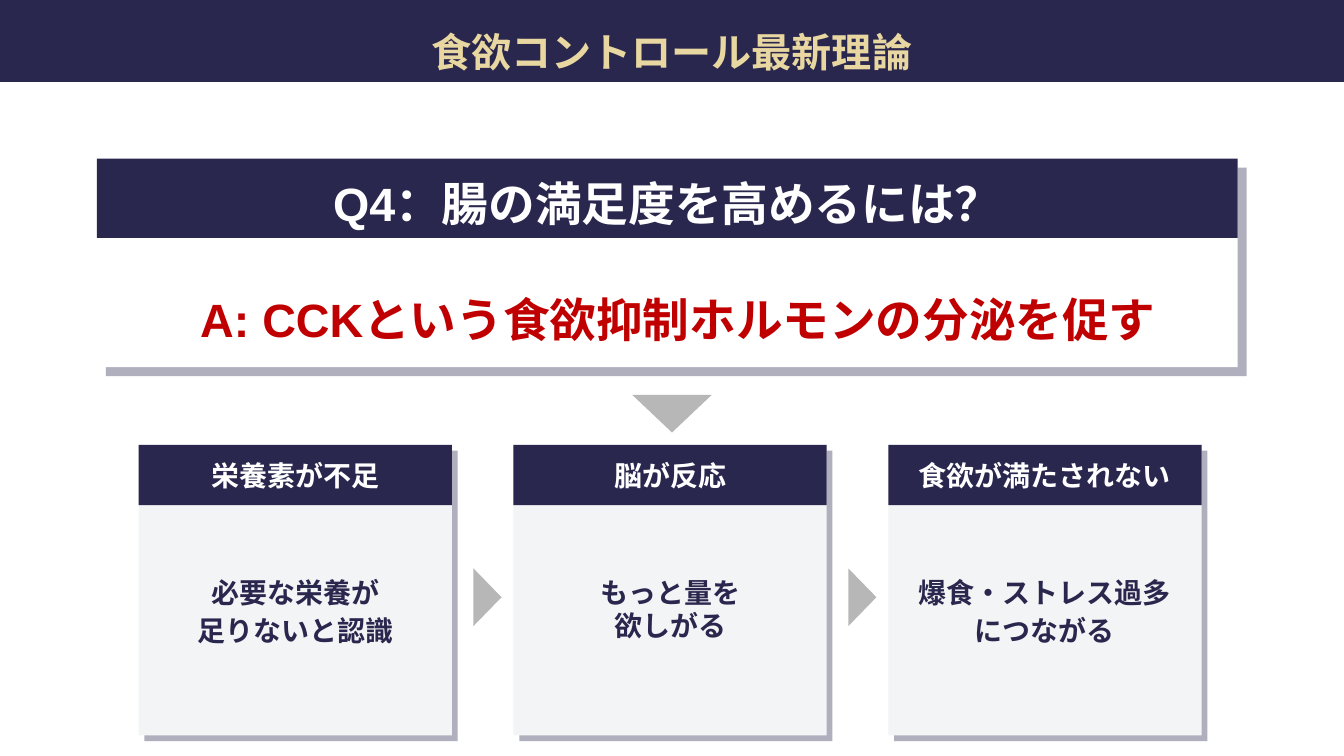
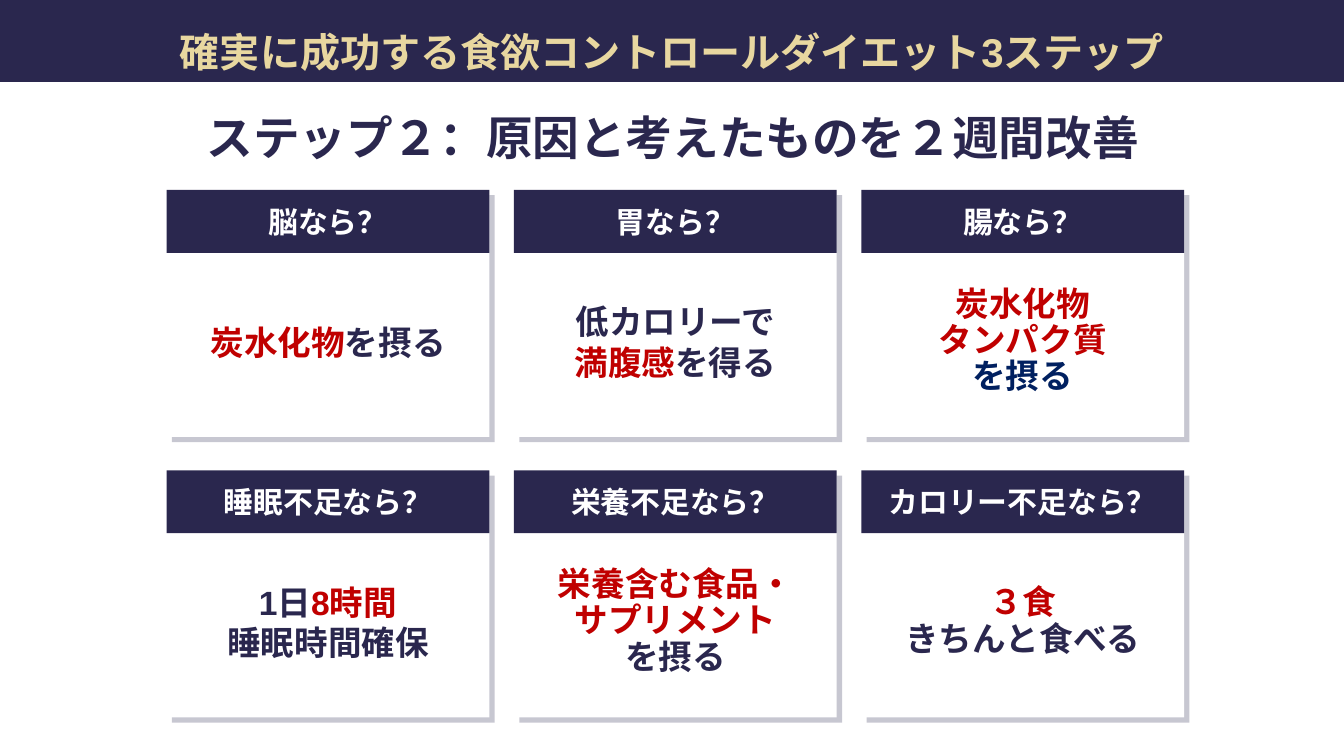
from dataclasses import dataclass

from lxml.etree import SubElement
from pptx import Presentation
from pptx.dml.color import RGBColor
from pptx.enum.shapes import MSO_SHAPE
from pptx.enum.text import MSO_ANCHOR, MSO_AUTO_SIZE, PP_ALIGN
from pptx.oxml.ns import qn
from pptx.util import Cm, Pt


@dataclass(frozen=True)
class Theme:
    navy: str = "2A274E"
    gold: str = "E8D7A0"
    red: str = "C00000"
    blue: str = "002060"
    white: str = "FFFFFF"
    pale: str = "F3F4F5"
    gray: str = "B7B7B7"
    font: str = "Arial"
    title_size: float = 21.5
    heading_size: float = 25
    cause_size: float = 15
    remedy_heading_size: float = 16
    remedy_size: float = 18


THEME = Theme()
SLIDE_WIDTH, SLIDE_HEIGHT = 25.4, 14.29
TITLE_HEIGHT = 1.55
INSET = 0.25


@dataclass(frozen=True)
class Box:
    left: float
    top: float
    width: float
    height: float

    def lengths(self):
        return [Cm(value) for value in (self.left, self.top, self.width, self.height)]

    def shifted(self, right, down):
        return Box(self.left + right, self.top + down, self.width, self.height)


@dataclass(frozen=True)
class PanelStyle:
    """Look of a panel: a heading band over a body with an offset shadow."""
    band_height: float
    heading_size: float
    body_color: str
    shadow_offset: float
    shadow_alpha: int
    heading_spacing: float = 1.0


QUESTION_STYLE = PanelStyle(1.5, THEME.heading_size, THEME.white, 0.17, 37, 1.15)
CAUSE_STYLE = PanelStyle(1.14, THEME.cause_size, THEME.pale, 0.11, 37)
REMEDY_STYLE = PanelStyle(1.19, THEME.remedy_heading_size, THEME.white, 0.1, 26)


def write_lines(shape, lines, size, color, spacing=1.0, anchor=MSO_ANCHOR.MIDDLE):
    """Write each line as a paragraph; a line is a text or a list of (text, color)."""
    frame = shape.text_frame
    frame.word_wrap = True
    frame.auto_size = MSO_AUTO_SIZE.NONE
    frame.vertical_anchor = anchor
    frame.margin_left = frame.margin_right = Cm(INSET)
    frame.margin_top = frame.margin_bottom = Cm(INSET)
    for index, line in enumerate(lines):
        paragraph = frame.paragraphs[0] if index == 0 else frame.add_paragraph()
        paragraph.alignment = PP_ALIGN.CENTER
        paragraph.line_spacing = spacing
        paragraph.font.name = THEME.font
        paragraph.font.size = Pt(size)
        paragraph.font.bold = True
        paragraph.font.color.rgb = RGBColor.from_string(color)
        for text, run_color in [(line, color)] if isinstance(line, str) else line:
            run = paragraph.add_run()
            run.text = text
            if run_color != color:
                run.font.color.rgb = RGBColor.from_string(run_color)


def add_block(slide, box, color, kind=MSO_SHAPE.RECTANGLE, alpha=None):
    shape = slide.shapes.add_shape(kind, *box.lengths())
    shape.shadow.inherit = False
    shape.line.fill.background()
    shape.fill.solid()
    shape.fill.fore_color.rgb = RGBColor.from_string(color)
    if alpha is not None:
        color_element = shape.fill._xPr.find(qn("a:solidFill"))[0]
        SubElement(color_element, qn("a:alpha")).set("val", str(alpha * 1000))
    return shape


def add_text(slide, box, lines, size, color, spacing=1.0):
    write_lines(slide.shapes.add_textbox(*box.lengths()), lines, size, color, spacing)


def add_triangle(slide, center_x, center_y, width, height, rotation):
    box = Box(center_x - width / 2, center_y - height / 2, width, height)
    add_block(slide, box, THEME.gray, MSO_SHAPE.ISOSCELES_TRIANGLE).rotation = rotation


def add_panel(slide, box, heading, style):
    offset = style.shadow_offset
    add_block(slide, box.shifted(offset, offset), THEME.navy, alpha=style.shadow_alpha)
    add_block(slide, box, style.body_color)
    band = add_block(slide, Box(box.left, box.top, box.width, style.band_height), THEME.navy)
    write_lines(band, [heading], style.heading_size, THEME.white, style.heading_spacing)


def add_card(slide, box, heading, lines, style, size, text_center, spacing):
    """Add a panel whose text is centred text_center below the top of the box."""
    add_panel(slide, box, heading, style)
    height = 2 * INSET + len(lines) * size * 0.044
    text_box = Box(box.left, box.top + text_center - height / 2, box.width, height)
    add_text(slide, text_box, lines, size, THEME.navy, spacing)


def add_titled_slide(presentation, title):
    slide = presentation.slides.add_slide(presentation.slide_layouts[5])
    shape = slide.shapes.title
    shape.left, shape.top, shape.width, shape.height = Box(
        0, 0, SLIDE_WIDTH, TITLE_HEIGHT).lengths()
    shape.fill.solid()
    shape.fill.fore_color.rgb = RGBColor.from_string(THEME.navy)
    write_lines(shape, [title], THEME.title_size, THEME.gold, 1.3, MSO_ANCHOR.TOP)
    return slide


def add_question(slide, box, question, answer):
    add_panel(slide, box, question, QUESTION_STYLE)
    answer_box = Box(box.left + 0.2, box.top + 1.7, box.width, 2.11)
    add_text(slide, answer_box, [answer], THEME.heading_size, THEME.red, 1.5)


def add_cause_chain(slide, box, causes):
    """Place the cards in a row, with a triangle in each gap."""
    card_width = 5.92
    step = (box.width - card_width) / (len(causes) - 1)
    for index, (heading, lines, spacing) in enumerate(causes):
        card = Box(box.left + index * step, box.top, card_width, box.height)
        add_card(slide, card, heading, lines, CAUSE_STYLE, THEME.cause_size, 3.1, spacing)
        if index:
            gap_center = card.left - (step - card_width) / 2
            add_triangle(slide, gap_center + 0.09, box.top + 2.88, 1.09, 0.53, 90)


def add_remedy_grid(slide, box, remedies, columns=3):
    card_width, card_height = 6.1, 4.67
    rows = len(remedies) // columns
    step_x = (box.width - card_width) / (columns - 1)
    step_y = (box.height - card_height) / (rows - 1)
    for index, (heading, lines, spacing) in enumerate(remedies):
        row, column = divmod(index, columns)
        card = Box(box.left + column * step_x, box.top + row * step_y,
                   card_width, card_height)
        add_card(slide, card, heading, lines, REMEDY_STYLE, THEME.remedy_size, 2.87, spacing)


def build_theory_slide(presentation):
    slide = add_titled_slide(presentation, "食欲コントロール最新理論")
    add_question(slide, Box(1.83, 3, 21.56, 3.94),
                 "Q4：腸の満足度を高めるには？",
                 "A: CCKという食欲抑制ホルモンの分泌を促す")
    add_triangle(slide, SLIDE_WIDTH / 2, 7.82, 1.5, 0.71, 180)
    add_cause_chain(slide, Box(2.62, 8.41, 20.09, 5.49), [
        ("栄養素が不足", ["必要な栄養が", "足りないと認識"], 1.15),
        ("脳が反応", ["もっと量を", "欲しがる"], 1.0),
        ("食欲が満たされない", ["爆食・ストレス過多", "につながる"], 1.15),
    ])


def build_step_slide(presentation):
    slide = add_titled_slide(presentation, "確実に成功する食欲コントロールダイエット3ステップ")
    add_text(slide, Box(3.12, 1.8, 19.18, 1.57),
             ["ステップ２：原因と考えたものを２週間改善"], THEME.heading_size, THEME.navy)
    navy, red, blue = THEME.navy, THEME.red, THEME.blue
    add_remedy_grid(slide, Box(3.15, 3.59, 19.23, 9.97), [
        ("脳なら？", [[("炭水化物", red), ("を摂る", navy)]], 1.0),
        ("胃なら？", ["低カロリーで", [("満腹感", red), ("を得る", navy)]], 1.0),
        ("腸なら？", [[("炭水化物", red)], [("タンパク質", red)], [("を摂る", blue)]], 0.9),
        ("睡眠不足なら？", [[("1日", navy), ("8時間", red)], "睡眠時間確保"], 1.0),
        ("栄養不足なら？",
         [[("栄養含む食品・", red)], [("サプリメント", red)], "を摂る"], 0.9),
        ("カロリー不足なら？", [[("３食", red)], "きちんと食べる"], 0.9),
    ])


def main():
    presentation = Presentation()
    presentation.slide_width = Cm(SLIDE_WIDTH)
    presentation.slide_height = Cm(SLIDE_HEIGHT)
    build_theory_slide(presentation)
    build_step_slide(presentation)
    presentation.save("out.pptx")


if __name__ == "__main__":
    main()
